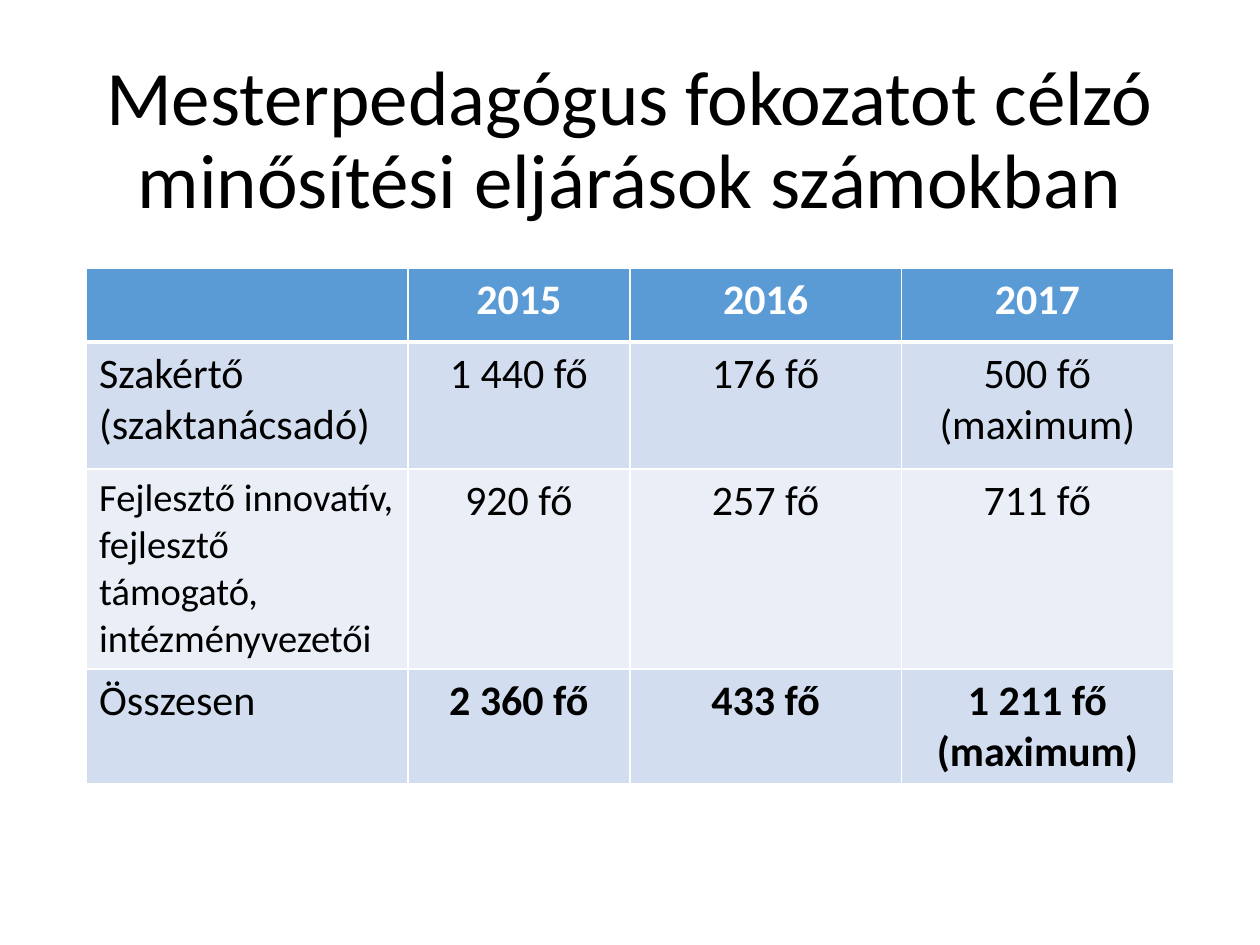
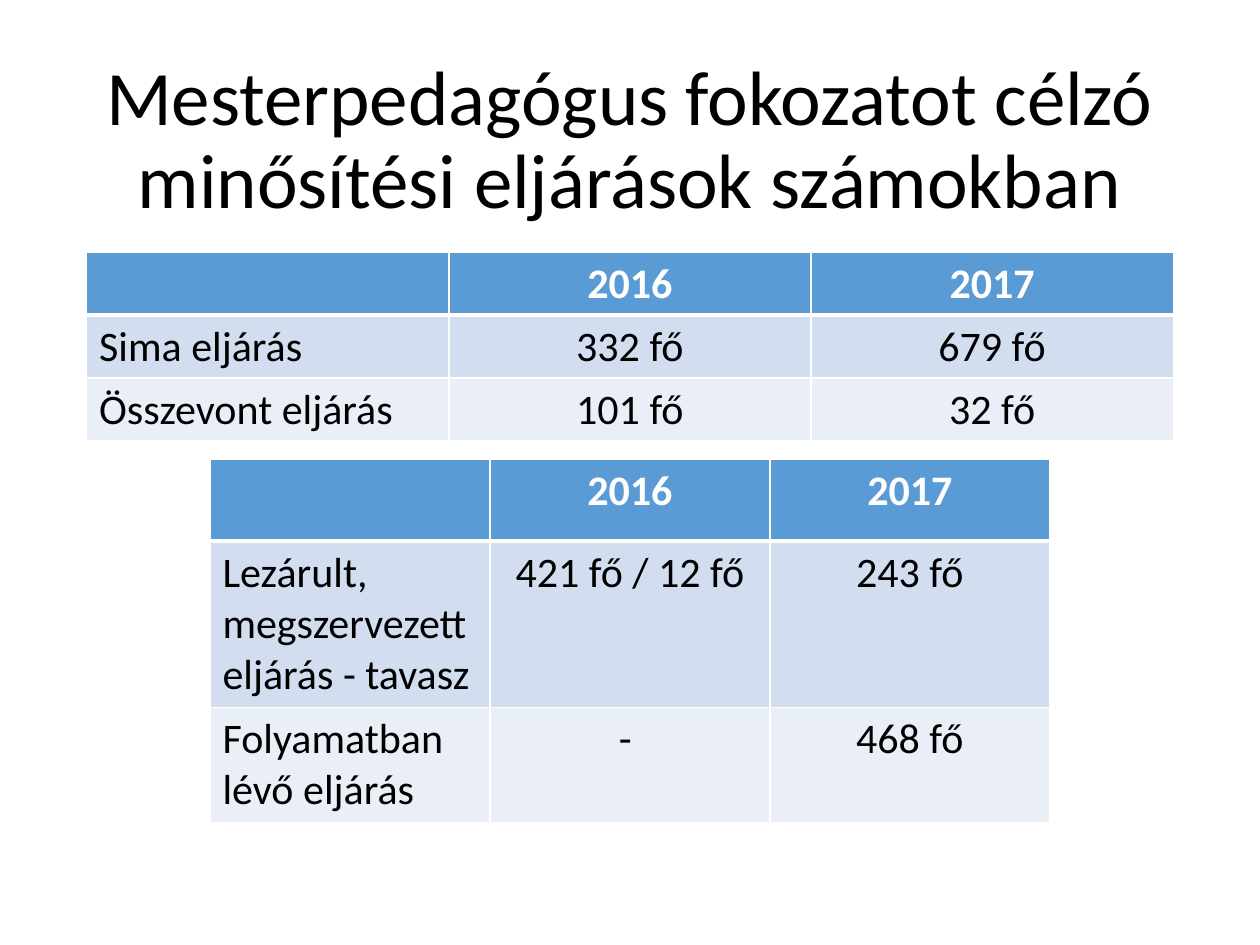
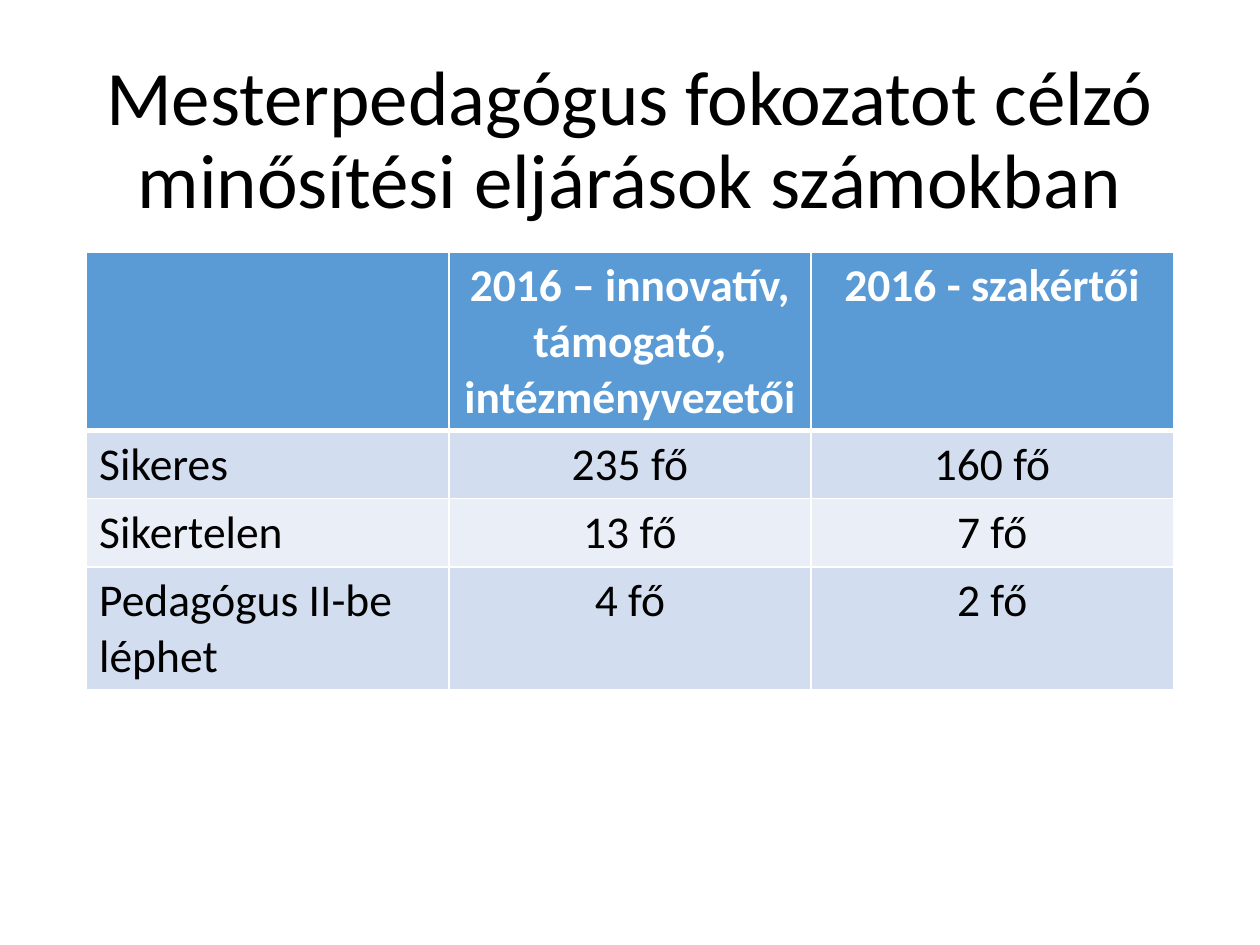
"""Build three slides of tables on master teacher qualification procedures."""
from lxml.etree import SubElement as Sub
from pptx import Presentation
from pptx.dml.color import RGBColor as Rgb
from pptx.enum.text import MSO_ANCHOR as Anchor, PP_ALIGN as Align
from pptx.oxml.ns import qn
from pptx.util import Pt

TITLE = "Mesterpedagógus fokozatot célzó minősítési eljárások számokban"
FONT = "Calibri"
BLACK, WHITE, HEAD = "000000", "FFFFFF", "5B9BD5"
BANDS = ("D2DEEF", "EAEFF7")
PAGE = (720, 540)
LEFT, WIDE = 49.5, 621

SLIDES = [
    [
        dict(
            top=153.25, cols=(183.6, 126.8, 155.3, 155.3), size=24,
            heights=(42.2, 72.5, 114.3, 65.8), small={(2, 0): 22}, total=True,
            rows=[
                ("", "2015", "2016", "2017"),
                ("Szakértő (szaktanácsadó)", "1 440 fő", "176 fő", "500 fő\n(maximum)"),
                ("Fejlesztő innovatív, fejlesztő támogató, intézményvezetői",
                 "920 fő", "257 fő", "711 fő"),
                ("Összesen", "2 360 fő", "433 fő", "1 211 fő (maximum)"),
            ],
        ),
    ],
    [
        dict(
            top=144, cols=(207,) * 3, size=24, heights=(36,) * 3,
            rows=[
                ("", "2016", "2017"),
                ("Sima eljárás", "332 fő", "679 fő"),
                ("Összevont eljárás", "101 fő", "32 fő"),
            ],
        ),
        dict(
            top=262.4, cols=(160,) * 3, size=24, heights=(46.8, 95, 65.8),
            rows=[
                ("", "2016", "2017"),
                ("Lezárult, megszervezett eljárás - tavasz", "421 fő / 12 fő", "243 fő"),
                ("Folyamatban lévő eljárás", "- ", "468 fő"),
            ],
        ),
    ],
    [
        dict(
            top=144, cols=(207,) * 3, size=26, heights=(102, 39, 39, 70),
            rows=[
                ("", "2016 – innovatív, támogató, intézményvezetői", "2016 - szakértői"),
                ("Sikeres", "235 fő", "160 fő"),
                ("Sikertelen", "13 fő", "7 fő"),
                ("Pedagógus II-be léphet", "4 fő", "2 fő"),
            ],
        ),
    ],
]


def color(code):
    return Rgb.from_string(code)


def write(frame, text, size=24, ink=BLACK, bold=False, align=Align.CENTER, space=None):
    for num, line in enumerate(text.split("\n")):
        para = frame.add_paragraph() if num else frame.paragraphs[0]
        para.alignment = align
        para.line_spacing = space
        run = para.add_run()
        run.text = line
        font = run.font
        font.name, font.size, font.bold = FONT, Pt(size), bold
        font.color.rgb = color(ink)


def edge(cell, row):
    props = cell._tc.get_or_add_tcPr()
    thick = {(0, "B"), (1, "T")}
    for side in "LRTB":
        width = 3 if (row, side) in thick else 1
        line = Sub(props, qn(f"a:ln{side}"), w=str(Pt(width)))
        fill = Sub(line, qn("a:solidFill"))
        Sub(fill, qn("a:srgbClr"), val=WHITE)


def add_title(slide):
    box = slide.shapes.add_textbox(Pt(LEFT), Pt(28.75), Pt(WIDE), Pt(104.4))
    frame = box.text_frame
    frame.word_wrap = True
    frame.vertical_anchor = Anchor.MIDDLE
    write(frame, TITLE, size=44, space=0.9)


def add_grid(slide, top, cols, heights, rows, size, small={}, total=False):
    wide = sum(cols)
    grid = slide.shapes.add_table(
        len(rows), len(cols), Pt((PAGE[0] - wide) / 2), Pt(top), Pt(wide), Pt(sum(heights))
    ).table
    for col, width in zip(grid.columns, cols):
        col.width = Pt(width)
    for r, (texts, height) in enumerate(zip(rows, heights)):
        grid.rows[r].height = Pt(height)
        last = total and r == len(rows) - 1
        for c, text in enumerate(texts):
            cell = grid.cell(r, c)
            edge(cell, r)
            cell.fill.solid()
            cell.fill.fore_color.rgb = color(BANDS[(r - 1) % 2] if r else HEAD)
            if text:
                write(
                    cell.text_frame, text, size=small.get((r, c), size),
                    ink=BLACK if r else WHITE, bold=r == 0 or (last and c > 0),
                    align=Align.CENTER if c else Align.LEFT,
                )


def main():
    deck = Presentation()
    deck.slide_width, deck.slide_height = map(Pt, PAGE)
    for grids in SLIDES:
        slide = deck.slides.add_slide(deck.slide_layouts[6])
        add_title(slide)
        for grid in grids:
            add_grid(slide, **grid)
    deck.save("out.pptx")


if __name__ == "__main__":
    main()
